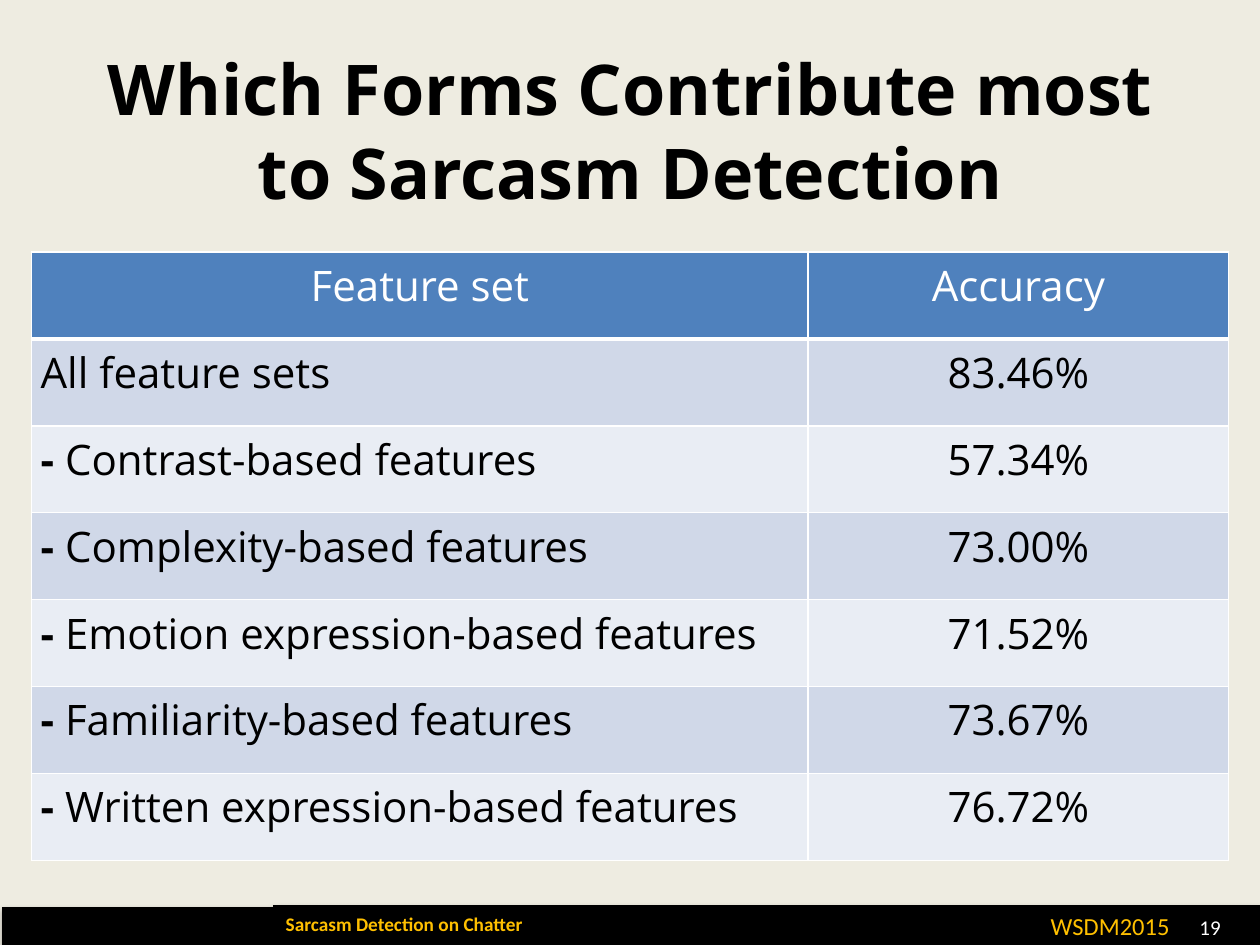
from lxml.etree import SubElement
from pptx import Presentation
from pptx.dml.color import RGBColor
from pptx.enum.shapes import MSO_SHAPE
from pptx.enum.text import MSO_ANCHOR, PP_ALIGN
from pptx.oxml import parse_xml
from pptx.oxml.ns import nsdecls, qn
from pptx.util import Cm, Pt

FEATURES = [
    ("All feature sets", "83.46%"),
    ("- Contrast-based features", "57.34%"),
    ("- Complexity-based features", "73.00%"),
    ("- Emotion expression-based features", "71.52%"),
    ("- Familiarity-based features", "73.67%"),
    ("- Written expression-based features", "76.72%"),
]


def color(value):
    """Turn a hex string into a colour."""
    return RGBColor.from_string(value)


def set_fill(target, value):
    """Fill a shape, cell or background with one colour."""
    target.fill.solid()
    target.fill.fore_color.rgb = color(value)


def write(frame, text, font="Open Sans", size=24, ink="000000", bold=False,
          align=PP_ALIGN.LEFT, anchor=MSO_ANCHOR.TOP, spacing=None, bold_dash=False):
    """Write one formatted paragraph, optionally with a bold leading dash."""
    frame.word_wrap = True
    frame.vertical_anchor = anchor
    paragraph = frame.paragraphs[0]
    paragraph.alignment = align
    paragraph.line_spacing = spacing
    parts = [(text, bold)]
    if bold_dash and text.startswith("-"):
        parts = [("-", True), (text[1:], bold)]
    for part, heavy in parts:
        run = paragraph.add_run()
        run.text = part
        run.font.name = font
        run.font.size = Pt(size)
        run.font.bold = heavy
        run.font.color.rgb = color(ink)


def add_text(slide, left, top, width, height, text, **style):
    """Add a text box and return its text frame."""
    box = slide.shapes.add_textbox(Cm(left), Cm(top), Cm(width), Cm(height))
    write(box.text_frame, text, **style)
    return box.text_frame


def add_bar(group, left, top, width, height, text=None, **style):
    """Add a black footer bar with a soft shadow."""
    shape = group.shapes.add_shape(
        MSO_SHAPE.RECTANGLE, Cm(left), Cm(top), Cm(width), Cm(height))
    set_fill(shape, "000000")
    shape.line.color.rgb = color("000000")
    shape.line.width = Pt(0.75)
    shape.shadow.inherit = False
    effects = shape.element.spPr.find(qn("a:effectLst"))
    effects.append(parse_xml(
        f'<a:outerShdw {nsdecls("a")} blurRad="{Pt(3.1)}" dist="{Pt(1.8)}" '
        'dir="5400000" rotWithShape="0"><a:srgbClr val="000000">'
        '<a:alpha val="35000"/></a:srgbClr></a:outerShdw>'))
    if text:
        write(shape.text_frame, text, font="Calibri", ink="FFC000", **style)


def add_footer(slide):
    """Add the footer bars and the slide number."""
    group = slide.shapes.add_group_shape()
    add_bar(group, 0.05, 18.29, 6.35, 0.76)
    add_bar(group, 5.51, 18.26, 20.73, 0.79, "Sarcasm Detection on Chatter",
            size=11, bold=True)
    add_bar(group, 23.83, 18.29, 1.47, 0.76)
    add_bar(group, 13.67, 18.29, 10.16, 0.76, "WSDM2015", size=14,
            align=PP_ALIGN.RIGHT, anchor=MSO_ANCHOR.MIDDLE)
    add_text(slide, 23.93, 18.31, 1.52, 0.76, "19", font="Calibri", size=12, ink="FFFFFF")


def set_borders(cell, bottom):
    """Draw white borders around a cell."""
    properties = cell._tc.get_or_add_tcPr()
    for index, (side, width) in enumerate([("L", 1), ("R", 1), ("T", 1), ("B", bottom)]):
        line = SubElement(properties, qn(f"a:ln{side}"), w=str(Pt(width)))
        fill = SubElement(line, qn("a:solidFill"))
        SubElement(fill, qn("a:srgbClr"), val="FFFFFF")
        properties.insert(index, line)


def add_accuracy_table(slide):
    """Add the table of feature sets and their accuracy."""
    rows = [("Feature set", "Accuracy")] + FEATURES
    table = slide.shapes.add_table(
        len(rows), 2, Cm(0.64), Cm(5.08), Cm(24.13), Cm(12.27)).table
    for column, width in zip(table.columns, (15.65, 8.48)):
        column.width = Cm(width)
    for row_index, values in enumerate(rows):
        header = row_index == 0
        band = "D0D8E8" if row_index % 2 else "E9EDF4"
        for column_index, text in enumerate(values):
            cell = table.cell(row_index, column_index)
            cell.margin_left = cell.margin_right = Cm(0.18)
            cell.margin_top = cell.margin_bottom = Cm(0.09)
            set_fill(cell, "4F81BD" if header else band)
            set_borders(cell, bottom=3 if header else 1)
            centred = header or column_index == 1
            write(cell.text_frame, text, ink="FFFFFF" if header else "000000",
                  align=PP_ALIGN.CENTER if centred else PP_ALIGN.LEFT, bold_dash=True)


def main():
    """Build the slide and save it."""
    presentation = Presentation()
    presentation.slide_width, presentation.slide_height = Cm(25.4), Cm(19.05)
    slide = presentation.slides.add_slide(presentation.slide_layouts[6])
    set_fill(slide.background, "EEECE1")
    add_footer(slide)
    title = add_text(slide, 1.27, 0.64, 22.86, 3.18,
                     "Which Forms Contribute most to Sarcasm Detection",
                     size=40, bold=True, align=PP_ALIGN.CENTER, spacing=Pt(48))
    title.margin_top = Cm(0.28)
    add_accuracy_table(slide)
    presentation.save("out.pptx")


if __name__ == "__main__":
    main()
